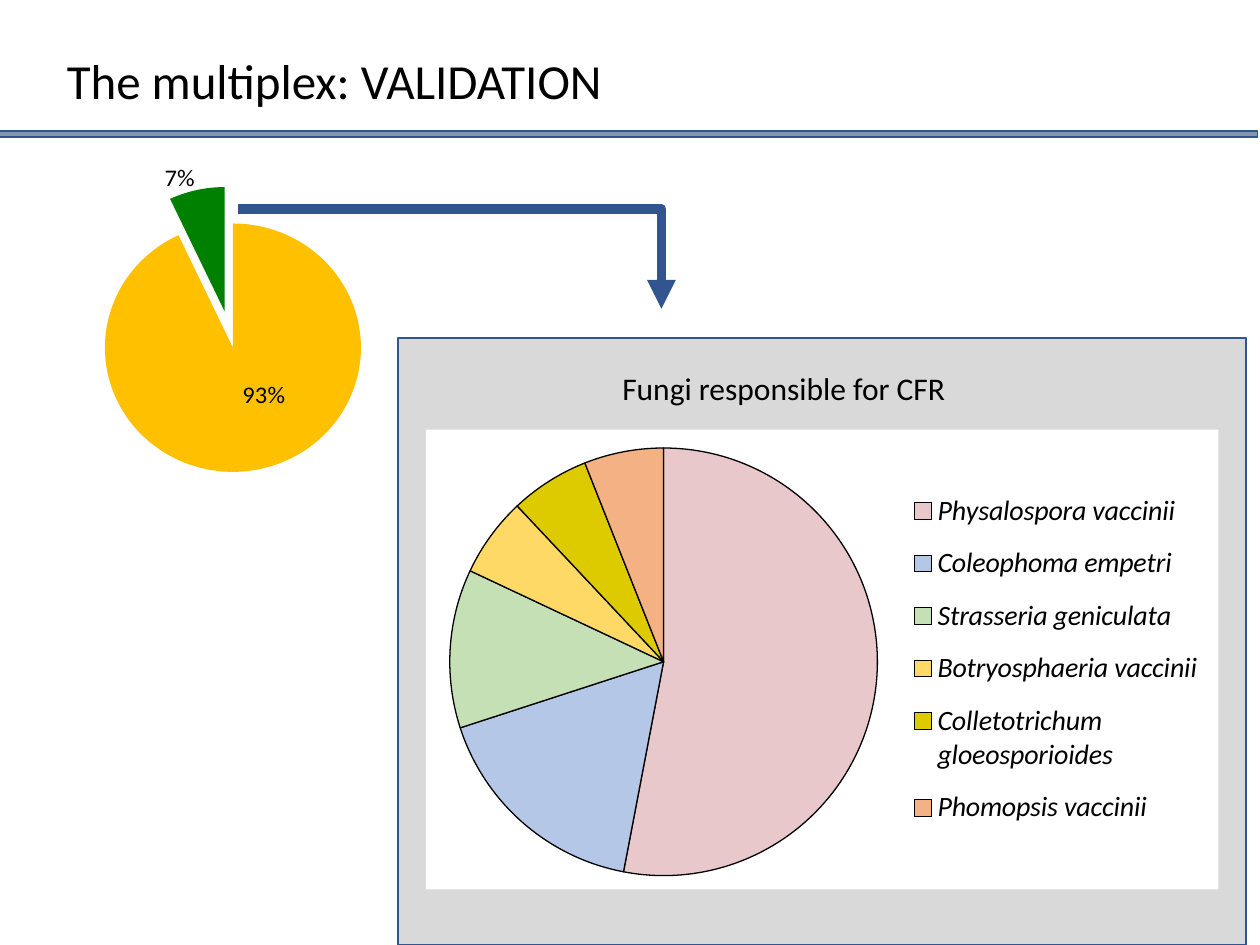
from lxml.etree import SubElement
from pptx import Presentation
from pptx.chart.data import CategoryChartData
from pptx.dml.color import RGBColor
from pptx.enum.chart import XL_CHART_TYPE, XL_LABEL_POSITION, XL_LEGEND_POSITION
from pptx.enum.shapes import MSO_SHAPE
from pptx.enum.text import MSO_ANCHOR, PP_ALIGN
from pptx.oxml import parse_xml
from pptx.oxml.ns import nsdecls, qn
from pptx.util import Inches, Pt

BLACK = RGBColor(0x00, 0x00, 0x00)
BLUE = RGBColor(0x32, 0x54, 0x91)
SLATE = RGBColor(0x84, 0x97, 0xB0)
GREY = RGBColor(0xD9, 0xD9, 0xD9)
AMBER = RGBColor(0xFF, 0xC0, 0x00)
GREEN = RGBColor(0x00, 0x80, 0x00)
ROSE = RGBColor(0xE9, 0xC8, 0xCB)
SKY = RGBColor(0xB4, 0xC7, 0xE7)
MINT = RGBColor(0xC5, 0xE0, 0xB4)
GOLD = RGBColor(0xFF, 0xD9, 0x66)
OLIVE = RGBColor(0xDD, 0xCB, 0x00)
PEACH = RGBColor(0xF4, 0xB1, 0x83)


def place(owner, index, **parts):
    for old in owner.findall(qn("c:layout")):
        owner.remove(old)
    layout = parse_xml(f"<c:layout {nsdecls('c')}><c:manualLayout/></c:layout>")
    for tag, val in parts.items():
        SubElement(layout[0], qn(f"c:{tag}")).set("val", str(val))
    owner.insert(index, layout)


def add_pie(box, names, values, colors):
    data = CategoryChartData()
    data.categories = names
    data.add_series("Series 1", values)
    frame = slide.shapes.add_chart(XL_CHART_TYPE.PIE, *map(Inches, box), data)
    chart = frame.chart
    chart.has_title = False
    chart.has_legend = False
    chart.font.name = "Calibri"
    chart.font.size = Pt(10)
    chart.font.color.rgb = BLACK
    plot = chart.plots[0]
    plot.vary_by_categories = True
    for i, color in enumerate(colors):
        fill = plot.series[0].points[i].format.fill
        fill.solid()
        fill.fore_color.rgb = color
    return chart


deck = Presentation()
deck.slide_width, deck.slide_height = Inches(10), Inches(7.5)
slide = deck.slides.add_slide(deck.slide_layouts[5])

for box, color in [
    ((3.16, 2.68, 6.73, 4.82), GREY),
    ((-0.02, 1.04, 10, 0.05), SLATE),
]:
    rect = slide.shapes.add_shape(MSO_SHAPE.RECTANGLE, *map(Inches, box))
    rect.shadow.inherit = False
    rect.fill.solid()
    rect.fill.fore_color.rgb = color
    rect.line.color.rgb = BLUE
    rect.line.width = Pt(1)

title = slide.shapes.title
title.left, title.top = Inches(0.43), Inches(0.41)
title.width, title.height = Inches(4.96), Inches(0.51)
label = slide.shapes.add_textbox(Inches(4.84), Inches(2.88), Inches(2.82), Inches(0.4))
for shape, text, size, anchor in [
    (title, "The multiplex: VALIDATION", 28, MSO_ANCHOR.BOTTOM),
    (label, "Fungi responsible for CFR", 18, MSO_ANCHOR.TOP),
]:
    body = shape.text_frame
    body.text = text
    body.word_wrap = True
    body.vertical_anchor = anchor
    para = body.paragraphs[0]
    para.alignment = PP_ALIGN.LEFT
    font = para.runs[0].font
    font.name = "Calibri"
    font.size = Pt(size)
    font.color.rgb = BLACK

fungi = [
    ("Physalospora vaccinii", 53, ROSE),
    ("Coleophoma empetri", 17, SKY),
    ("Strasseria geniculata", 12, MINT),
    ("Botryosphaeria vaccinii", 6, GOLD),
    ("Colletotrichum gloeosporioides", 6, OLIVE),
    ("Phomopsis vaccinii", 6, PEACH),
]
chart = add_pie((3.38, 3.41, 6.29, 3.65), *zip(*fungi))
for point in range(len(fungi)):
    line = chart.plots[0].series[0].points[point].format.line
    line.color.rgb = BLACK
    line.width = Pt(0.75)
chart.has_legend = True
legend = chart.legend
legend.position = XL_LEGEND_POSITION.RIGHT
legend.include_in_layout = False
legend.font.size = Pt(16)
legend.font.italic = True
legend.font.name = "Calibri"
legend.font.color.rgb = BLACK
place(legend._element, 1, xMode="edge", yMode="edge", x=0.6, y=0.1, w=0.39, h=0.8)
root = chart._chartSpace.find(qn("c:chart"))
place(root.find(qn("c:plotArea")), 0, layoutTarget="inner",
      xMode="edge", yMode="edge", x=0.03, y=0.04, w=0.54, h=0.93)
root.addnext(parse_xml(
    f"<c:spPr {nsdecls('c', 'a')}><a:solidFill><a:srgbClr val='FFFFFF'/></a:solidFill>"
    "<a:ln><a:noFill/></a:ln></c:spPr>"))

chart = add_pie((0.12, 1.22, 3.39, 2.71), ["1", "2"], [93, 7], [AMBER, GREEN])
plot = chart.plots[0]
root = chart._chartSpace.find(qn("c:chart"))
place(root.find(qn("c:plotArea")), 0, layoutTarget="inner",
      xMode="edge", yMode="edge", x=0.21, y=0.18, w=0.6, h=0.75)
series = plot.series[0]
slice = series.points[1].format.fill._xPr.getparent()
slice.find(qn("c:spPr")).addprevious(
    parse_xml(f"<c:explosion {nsdecls('c')} val='30'/>"))
labels = series.data_labels
labels.show_value = False
labels.show_percentage = True
labels.position = XL_LABEL_POSITION.OUTSIDE_END
main = series.points[0].data_label
main.position = XL_LABEL_POSITION.CENTER
for font in (labels.font, main.font):
    font.size = Pt(14)
    font.name = "Calibri"
    font.color.rgb = BLACK
mark = labels._element.find(qn("c:dLbl"))
mark.find(qn("c:showVal")).set("val", "0")
mark.find(qn("c:showPercent")).set("val", "1")
place(mark, 1, x=0.04, y=-0.04)

path = slide.shapes.build_freeform(Inches(1.89), Inches(1.66))
path.add_line_segments(
    [(Inches(5.25), Inches(1.66)), (Inches(5.25), Inches(2.45))], close=False)
arrow = path.convert_to_shape()
arrow.shadow.inherit = False
arrow.fill.background()
arrow.line.color.rgb = BLUE
arrow.line.width = Pt(5.5)
SubElement(arrow.line._get_or_add_ln(), qn("a:tailEnd")).set("type", "triangle")

deck.save("out.pptx")
